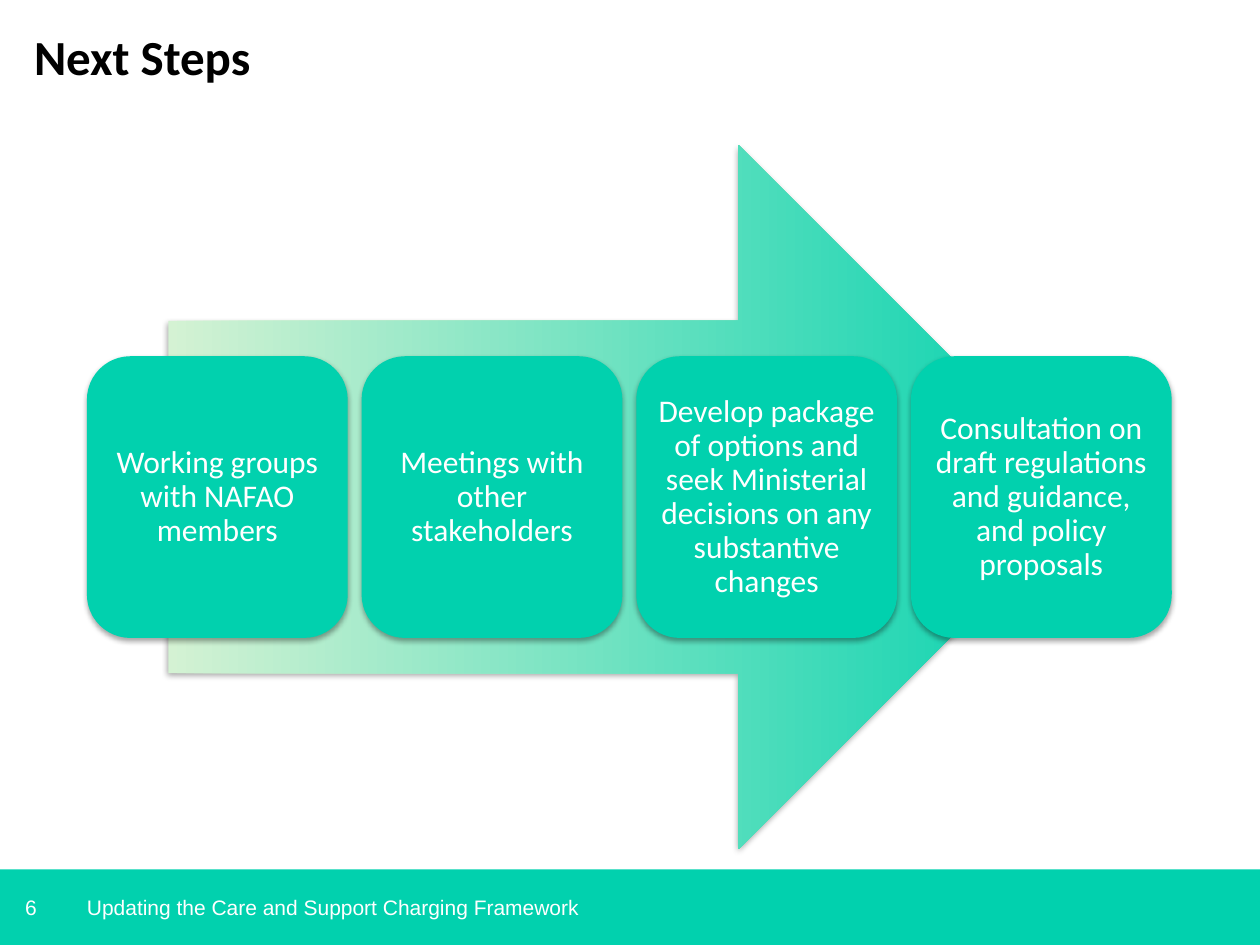
from lxml import etree
from pptx import Presentation
from pptx.dml.color import RGBColor
from pptx.enum.shapes import MSO_SHAPE
from pptx.enum.text import MSO_ANCHOR, PP_ALIGN
from pptx.oxml.ns import qn
from pptx.util import Inches, Pt

TEAL = RGBColor(0x01, 0xD1, 0xAE)
PALE = RGBColor(0xD4, 0xF2, 0xD3)
WHITE = RGBColor(0xFF, 0xFF, 0xFF)
BLACK = RGBColor(0, 0, 0)
RECT, ROUND, ARROW = MSO_SHAPE.RECTANGLE, MSO_SHAPE.ROUNDED_RECTANGLE, MSO_SHAPE.RIGHT_ARROW
TOP, MIDDLE = MSO_ANCHOR.TOP, MSO_ANCHOR.MIDDLE
LEFT, CENTER = PP_ALIGN.LEFT, PP_ALIGN.CENTER

STEPS = [
    "Working groups with NAFAO members",
    "Meetings with other stakeholders",
    "Develop package of options and seek Ministerial decisions on any substantive changes",
    "Consultation on draft regulations and guidance, and policy proposals",
]


def set_text(sp, text, size=12, font="Arial", color=WHITE, bold=False, align=LEFT,
             anchor=MIDDLE, inset=0, left_inset=None, spacing=None, wrap=True):
    tf = sp.text_frame
    tf.word_wrap = wrap
    tf.vertical_anchor = anchor
    tf.margin_left = Inches(inset if left_inset is None else left_inset)
    tf.margin_right = tf.margin_top = tf.margin_bottom = Inches(inset)
    p = tf.paragraphs[0]
    p.alignment = align
    if spacing:
        p.line_spacing = spacing
    r = p.add_run()
    r.text = text
    r.font.size, r.font.name, r.font.bold = Pt(size), font, bold
    r.font.color.rgb = color


def add_text(s, box, text, **fmt):
    sp = s.shapes.add_textbox(*(Inches(v) for v in box))
    set_text(sp, text, **fmt)


def add_block(s, kind, box, fill=TEAL):
    sp = s.shapes.add_shape(kind, *(Inches(v) for v in box))
    sp.fill.solid()
    sp.fill.fore_color.rgb = fill
    sp.line.fill.background()
    sp.shadow.inherit = False
    return sp


def add_soft_shadow(sp):
    effects = sp._element.spPr.find(qn("a:effectLst"))
    shadow = etree.SubElement(effects, qn("a:outerShdw"), blurRad=str(Pt(3.1)),
                              dist=str(Pt(1.8)), dir="5400000", rotWithShape="0")
    color = etree.SubElement(shadow, qn("a:srgbClr"), val="000000")
    etree.SubElement(color, qn("a:alpha"), val="35000")


def add_footer(s, box, number, text):
    x, y, w, h = box
    add_block(s, RECT, box)
    add_text(s, (x, y, 0.59, h), number, left_inset=0.2)
    add_text(s, (x + 0.69, y, 8.62, h), text)


def add_process(s, box, steps):
    x, y, w, h = box
    # Arrow behind the steps, 85% of the width
    arrow_w = w * 0.85
    arrow = add_block(s, ARROW, (x + (w - arrow_w) / 2, y, arrow_w, h))
    arrow.fill.gradient()
    arrow.fill.gradient_angle = 0
    for stop, color in zip(arrow.fill.gradient_stops, (PALE, TEAL)):
        stop.color.rgb = color
    add_soft_shadow(arrow)
    # Equal cards across the full width, 40% of the height
    gap, card_h = 0.11, h * 0.4
    card_w = (w - gap * (len(steps) - 1)) / len(steps)
    for i, step in enumerate(steps):
        card = add_block(s, ROUND, (x + i * (card_w + gap), y + (h - card_h) / 2, card_w, card_h))
        add_soft_shadow(card)
        set_text(card, step, size=18, font="Calibri", align=CENTER, inset=0.07, spacing=0.9)


def main():
    prs = Presentation()
    prs.slide_width, prs.slide_height = Inches(10), Inches(7.5)
    s = prs.slides.add_slide(prs.slide_layouts[6])
    add_footer(s, (0, 6.9, 10, 0.6), "6", "Updating the Care and Support Charging Framework")
    add_text(s, (0.27, 0.21, 8.62, 0.79), "Next Steps", size=28, font="Calibri",
             color=BLACK, bold=True, anchor=TOP)
    add_process(s, (0.69, 1.15, 8.61, 5.59), STEPS)
    prs.save("out.pptx")


if __name__ == "__main__":
    main()
